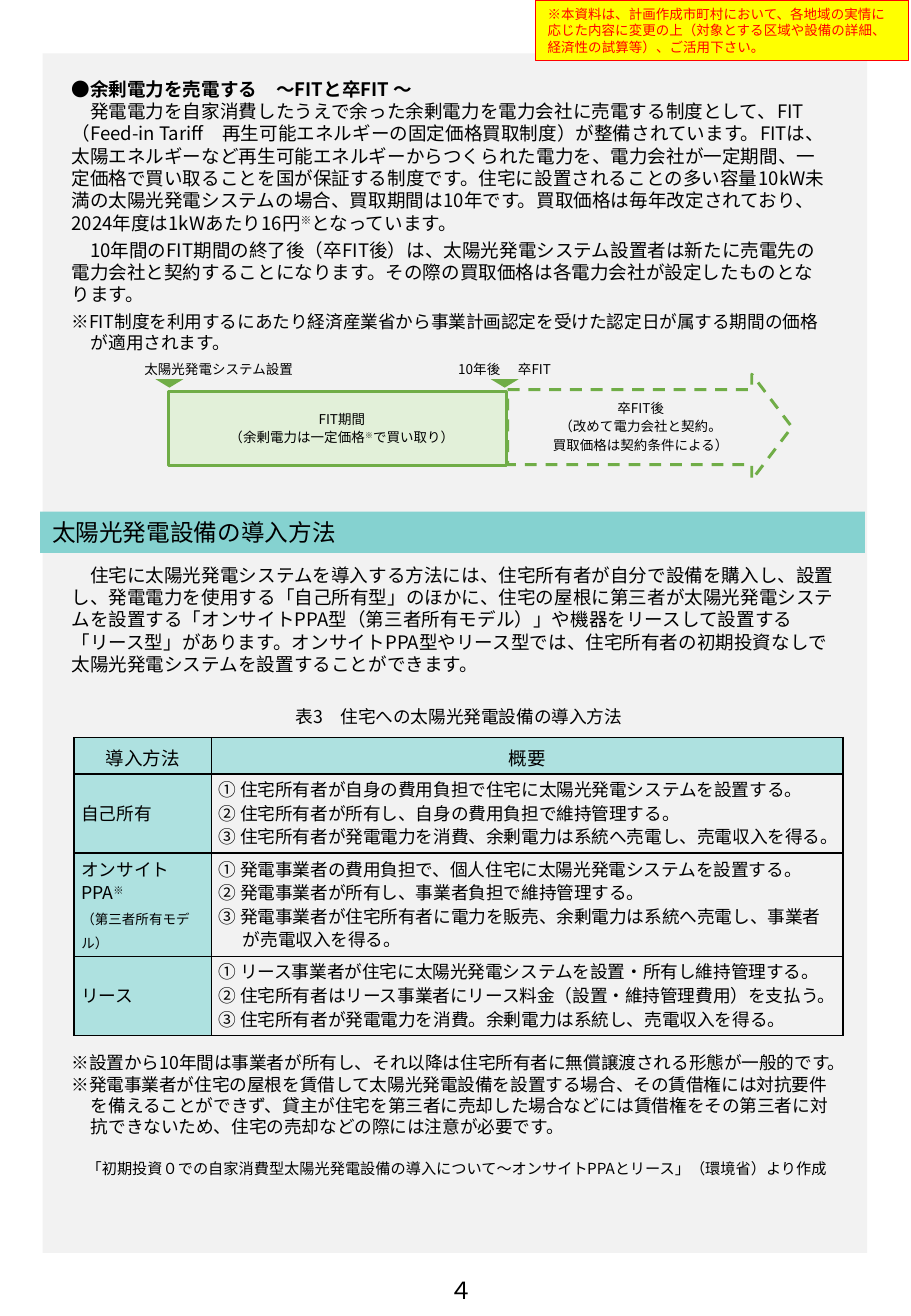
import dataclasses

import lxml.etree
import pptx
import pptx.dml.color
import pptx.enum.dml
import pptx.enum.shapes
import pptx.enum.text
import pptx.oxml.ns
import pptx.util

RGB = pptx.dml.color.RGBColor
Pt = pptx.util.Pt
SHAPE = pptx.enum.shapes.MSO_SHAPE
ALIGN = pptx.enum.text.PP_ALIGN
ANCHOR = pptx.enum.text.MSO_ANCHOR
qn = pptx.oxml.ns.qn

BLACK = RGB(0x00, 0x00, 0x00)
PANEL = RGB(0xF2, 0xF2, 0xF2)
GREEN = RGB(0x70, 0xAD, 0x47)
PALE_GREEN = RGB(0xE2, 0xF0, 0xD9)
TEAL = RGB(0x85, 0xD2, 0xD0)
PALE_TEAL = RGB(0xAE, 0xE1, 0xE0)
YELLOW = RGB(0xFF, 0xFF, 0x00)
RED = RGB(0xFF, 0x00, 0x00)
FONT = "Noto Sans CJK JP"


def px(length):
    return pptx.util.Emu(length * 9144)  # 100 px to the inch


class Para:
    """Runs are strings, or (text, size) pairs; a lone ※ run is raised."""

    def __init__(self, *runs, size=8, leading=None, align=ALIGN.LEFT, bold=False,
                 before=0, after=0, hang=0):
        self.runs, self.size, self.align, self.bold = runs, size, align, bold
        self.leading = leading or round(size * 1.2, 1)
        self.before, self.after, self.hang = before, after, hang


@dataclasses.dataclass
class Page:
    slide: object
    font: str = FONT

    def fill_text(self, frame, paras, color=BLACK):
        frame.word_wrap = True
        for i, para in enumerate(paras):
            p = frame.paragraphs[0] if i == 0 else frame.add_paragraph()
            p.alignment = para.align
            p.line_spacing = Pt(para.leading)
            p.space_before, p.space_after = Pt(para.before), Pt(para.after)
            if para.hang:
                p._p.get_or_add_pPr().set("marL", str(px(para.hang)))
                p._p.get_or_add_pPr().set("indent", str(-px(para.hang)))
            for piece in para.runs:
                text, size = piece if isinstance(piece, tuple) else (piece, para.size)
                run = p.add_run()
                run.text = text
                run.font.size, run.font.bold = Pt(size), para.bold
                run.font.color.rgb = color
                run.font.name = self.font
                props = run._r.get_or_add_rPr()
                lxml.etree.SubElement(props, qn("a:ea")).set("typeface", self.font)
                if text == "※":
                    props.set("baseline", "30000")

    def text(self, left, top, width, height, *paras):
        box = self.slide.shapes.add_textbox(px(left), px(top), px(width), px(height))
        self.fill_text(box.text_frame, paras)

    def shape(self, kind, left, top, width, height, fill=None, line=None,
              weight=1.75, dashed=False, adjust=(), turn=0, paras=(), color=BLACK):
        shape = self.slide.shapes.add_shape(
            kind, px(left), px(top), px(width), px(height))
        shape.shadow.inherit = False
        shape.rotation = turn
        for i, value in enumerate(adjust):
            shape.adjustments[i] = value
        if fill is None:
            shape.fill.background()
        else:
            shape.fill.solid()
            shape.fill.fore_color.rgb = fill
        if line is None:
            shape.line.fill.background()
        else:
            shape.line.color.rgb = line
            shape.line.width = Pt(weight)
            if dashed:
                shape.line.dash_style = pptx.enum.dml.MSO_LINE.DASH
        if paras:
            shape.text_frame.vertical_anchor = ANCHOR.MIDDLE
            self.fill_text(shape.text_frame, paras, color)

    def table(self, left, top, widths, heights, rows):
        table = self.slide.shapes.add_table(
            len(rows), len(widths), px(left), px(top),
            px(sum(widths)), px(sum(heights))).table
        table.first_row = table.horz_banding = False
        for column, width in zip(table.columns, widths):
            column.width = px(width)
        for r, (height, row) in enumerate(zip(heights, rows)):
            table.rows[r].height = px(height)
            for c, paras in enumerate(row):
                cell = table.cell(r, c)
                cell.margin_left = cell.margin_right = px(6)
                cell.margin_top = cell.margin_bottom = px(2)
                cell.vertical_anchor = ANCHOR.MIDDLE if r else ANCHOR.TOP
                if r == 0 or c == 0:
                    cell.fill.solid()
                    cell.fill.fore_color.rgb = PALE_TEAL
                else:
                    cell.fill.background()
                self.border(cell)
                self.fill_text(cell.text_frame, paras)

    def border(self, cell):
        props = cell._tc.get_or_add_tcPr()
        for i, side in enumerate(("a:lnL", "a:lnR", "a:lnT", "a:lnB")):
            edge = lxml.etree.Element(qn(side), w=str(Pt(1)))
            solid = lxml.etree.SubElement(edge, qn("a:solidFill"))
            lxml.etree.SubElement(solid, qn("a:srgbClr")).set("val", str(BLACK))
            props.insert(i, edge)


def head_cell(text):
    return [Para(text, size=11, leading=18, align=ALIGN.CENTER)]


def body_cell(*lines, hang=0):
    return [Para(line, size=10.5, leading=14, hang=hang) for line in lines]


def centred(*runs, leading=11):
    return Para(*runs, leading=leading, align=ALIGN.CENTER)


def main():
    deck = pptx.Presentation()
    deck.slide_width, deck.slide_height = px(750), px(1083)
    page = Page(deck.slides.add_slide(deck.slide_layouts[6]))

    # Grey panel and the section on selling surplus power
    page.shape(SHAPE.RECTANGLE, 35, 44, 679, 987, fill=PANEL)
    page.text(
        49, 59, 646, 239,
        Para("●余剰電力を売電する　～FITと卒FIT ～", size=11, bold=True),
        Para("　発電電力を自家消費したうえで余った余剰電力を電力会社に売電する制度として、"
             "FIT（Feed-in Tariff　再生可能エネルギーの固定価格買取制度）が整備されています。"
             "FITは、太陽エネルギーなど再生可能エネルギーからつくられた電力を、電力会社が一定期間、"
             "一定価格で買い取ることを国が保証する制度です。住宅に設置されることの多い容量10kW"
             "未満の太陽光発電システムの場合、買取期間は10年です。買取価格は毎年改定されており、"
             "2024年度は1kWあたり16円", "※", "となっています。", size=11, after=3),
        Para("　10年間のFIT期間の終了後（卒FIT後）は、太陽光発電システム設置者は新たに売電先の"
             "電力会社と契約することになります。その際の買取価格は各電力会社が設定したものと"
             "なります。", size=11, after=3),
        Para("※FIT制度を利用するにあたり経済産業省から事業計画認定を受けた認定日が属する期間の"
             "価格が適用されます。", size=10.5, after=3, hang=16))

    # Timeline: FIT period, then the years after it
    page.shape(SHAPE.RECTANGLE, 139, 322, 278, 61, fill=PALE_GREEN, line=GREEN)
    page.shape(SHAPE.RIGHT_ARROW, 418, 308, 234, 87, line=GREEN, dashed=True,
               adjust=(0.71, 0.38))
    for marker_left in (128, 404):
        page.shape(SHAPE.ISOSCELES_TRIANGLE, marker_left, 312, 23, 7,
                   fill=GREEN, turn=180)
    page.text(109, 292, 152, 20, Para("太陽光発電システム設置", leading=10))
    page.text(357, 292, 117, 21,
              centred("10年後", ("　", 10.5), "卒FIT", leading=10))
    page.text(167, 331, 229, 37, centred("FIT期間"),
              centred("（余剰電力は一定価格", "※", "で買い取り）"))
    page.text(422, 322, 211, 56, centred("卒FIT後"),
              centred("（改めて電力会社と契約。"),
              centred("買取価格は契約条件による）"))

    # Section on ways to install
    page.shape(SHAPE.RECTANGLE, 33, 421, 679, 34, fill=TEAL,
               paras=[Para("太陽光発電設備の導入方法", size=14)])
    page.text(
        49, 459, 650, 102,
        Para("　住宅に太陽光発電システムを導入する方法には、住宅所有者が自分で設備を購入し、設置し、"
             "発電電力を使用する「自己所有型」のほかに、住宅の屋根に第三者が太陽光発電システムを"
             "設置する「オンサイトPPA型（第三者所有モデル）」や機器をリースして設置する「リース型」が"
             "あります。オンサイトPPA型やリース型では、住宅所有者の初期投資なしで太陽光発電システムを"
             "設置することができます。", size=11))

    # Table of methods with its caption
    page.text(55, 576, 646, 28,
              Para("表3　住宅への太陽光発電設備の導入方法", size=10.5, align=ALIGN.CENTER))
    ppa_name = [Para("オンサイト", size=10.5, leading=14),
                Para("PPA", "※", size=10.5, leading=14),
                Para("（第三者所有モデル）", leading=14)]
    page.table(61, 607, (113, 520), (30, 65, 85, 65), [
        (head_cell("導入方法"), head_cell("概要")),
        (body_cell("自己所有"), body_cell(
            "① 住宅所有者が自身の費用負担で住宅に太陽光発電システムを設置する。",
            "② 住宅所有者が所有し、自身の費用負担で維持管理する。",
            "③ 住宅所有者が発電電力を消費、余剰電力は系統へ売電し、売電収入を得る。")),
        (ppa_name, body_cell(
            "① 発電事業者の費用負担で、個人住宅に太陽光発電システムを設置する。",
            "② 発電事業者が所有し、事業者負担で維持管理する。",
            "③ 発電事業者が住宅所有者に電力を販売、余剰電力は系統へ売電し、"
            "事業者が売電収入を得る。", hang=20)),
        (body_cell("リース"), body_cell(
            "① リース事業者が住宅に太陽光発電システムを設置・所有し維持管理する。",
            "② 住宅所有者はリース事業者にリース料金（設置・維持管理費用）を支払う。",
            "③ 住宅所有者が発電電力を消費。余剰電力は系統し、売電収入を得る。"))])

    # Notes and reference
    page.text(
        49, 861, 650, 130,
        Para("※設置から10年間は事業者が所有し、それ以降は住宅所有者に無償譲渡される形態が"
             "一般的です。", size=10.5, hang=16),
        Para("※発電事業者が住宅の屋根を賃借して太陽光発電設備を設置する場合、その賃借権には"
             "対抗要件を備えることができず、貸主が住宅を第三者に売却した場合などには賃借権を"
             "その第三者に対抗できないため、住宅の売却などの際には注意が必要です。",
             size=10.5, hang=16),
        Para("　「初期投資０での自家消費型太陽光発電設備の導入について～オンサイトPPAとリース」"
             "（環境省）より作成", size=9, before=13))

    # Page number and notice to municipalities
    page.text(360, 1045, 35, 34, Para("４", size=14, align=ALIGN.CENTER))
    page.shape(
        SHAPE.RECTANGLE, 441, 0, 307, 50, fill=YELLOW, line=RED, weight=0.75, color=RED,
        paras=[Para("※本資料は、計画作成市町村において、各地域の実情に応じた内容に変更の上"
                    "（対象とする区域や設備の詳細、経済性の試算等）、ご活用下さい。")])

    deck.save("out.pptx")


if __name__ == "__main__":
    main()
